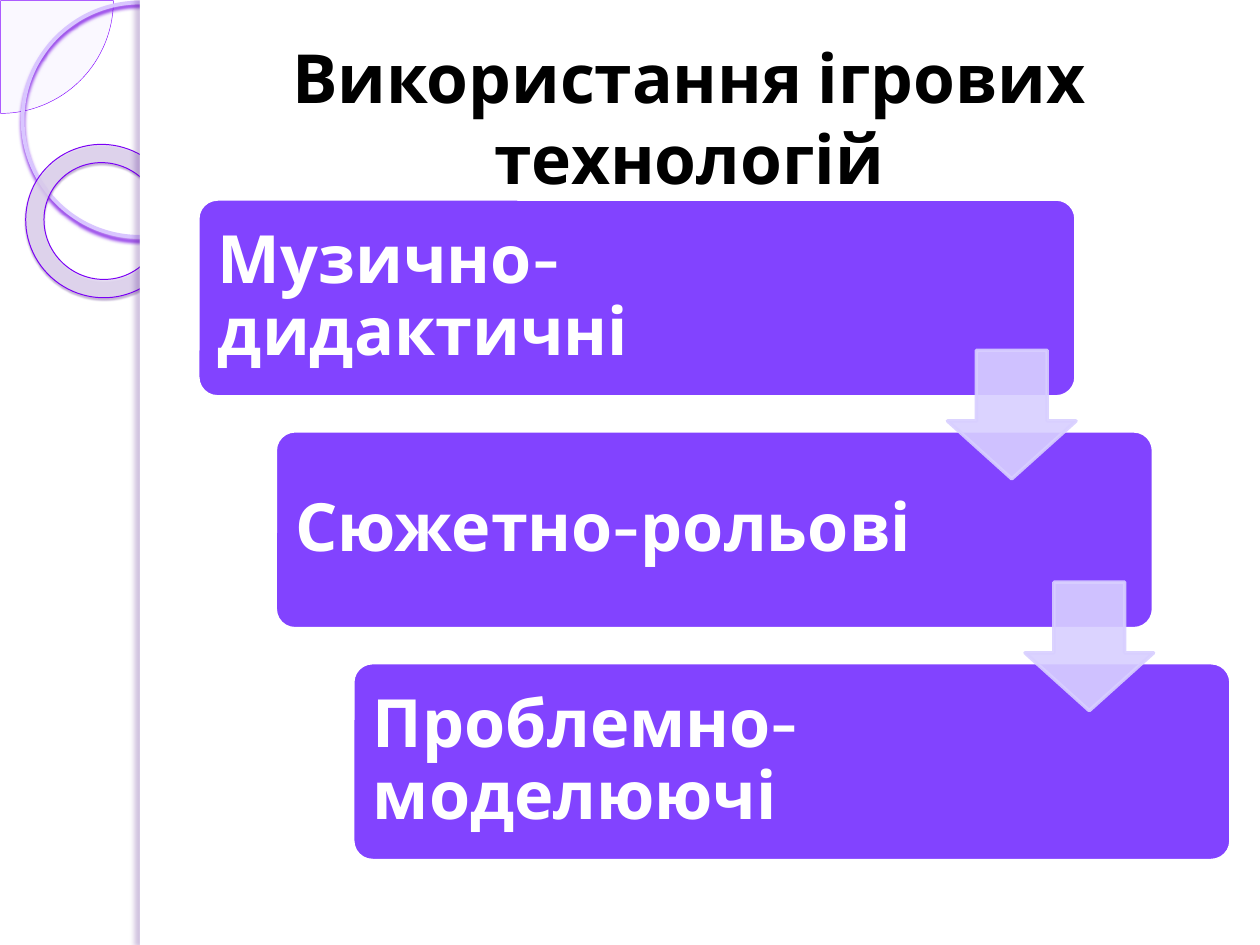
from pptx import Presentation
from pptx.dml.color import RGBColor
from pptx.enum.shapes import MSO_SHAPE
from pptx.enum.text import MSO_ANCHOR, PP_ALIGN
from pptx.oxml.ns import qn
from pptx.util import Inches, Pt
from lxml.etree import SubElement

TITLE = "Використання ігрових технологій"
STEPS = ["Музично-дидактичні", "Сюжетно-рольові", "Проблемно-моделюючі"]

THEME = {
    "font": "Cabin", "title_size": 38.7, "step_size": 38,
    "black": "000000", "white": "FFFFFF", "step": "8243FF", "arrow": "D8CFFF",
    "pie": "F1EAFF", "pie_line": "8307FF", "ring": "D9C6FF", "ring_shadow": "7100E2",
    "donut": "E3D9F1", "donut_line": "7B00F5", "donut_shadow": "380070",
    "edge_shadow": "4C1484",
}
STEP_X, STEP_Y, STEP_W, STEP_H = 1.57, 1.58, 6.97, 1.57
SHIFT_X, SHIFT_Y = 0.615, 1.84
ARROW, ARROW_DROP = 1.02, 1.2
TEXT_W = 5.35


def rgb(name):
    return RGBColor.from_string(THEME[name])


def set_alpha(fmt, alpha):
    color = next(fmt.iter(qn("a:srgbClr")))
    SubElement(color, qn("a:alpha"), val=str(alpha * 1000))


def add_shadow(sp, color, alpha, blur, dist, angle):
    effects = sp._element.spPr.find(qn("a:effectLst"))
    shadow = SubElement(effects, qn("a:outerShdw"), blurRad=str(Pt(blur)), dist=str(Pt(dist)),
                        dir=str(angle * 60000), algn="tl", rotWithShape="0")
    clr = SubElement(shadow, qn("a:srgbClr"), val=THEME[color])
    SubElement(clr, qn("a:alpha"), val=str(alpha * 1000))


def add_shape(s, kind, box, fill=None, line=None, width=1, adj=(), alpha=None,
              line_alpha=None, rotation=0, shadow=None):
    sp = s.shapes.add_shape(kind, *map(Inches, box))
    sp.rotation = rotation
    sp.shadow.inherit = False
    for i, value in enumerate(adj):
        sp.adjustments[i] = value
    if fill:
        sp.fill.solid()
        sp.fill.fore_color.rgb = rgb(fill)
        if alpha:
            set_alpha(sp._element.spPr.find(qn("a:solidFill")), alpha)
    else:
        sp.fill.background()
    if line:
        sp.line.color.rgb = rgb(line)
        sp.line.width = Pt(width)
        if line_alpha:
            set_alpha(sp._element.spPr.find(qn("a:ln")), line_alpha)
    else:
        sp.line.fill.background()
    if shadow:
        add_shadow(sp, *shadow)
    return sp


def add_text(s, text, box, size, color, align=PP_ALIGN.LEFT, inset=(0.1, 0.05), spacing=1.0):
    tf = s.shapes.add_textbox(*map(Inches, box)).text_frame
    tf.word_wrap = True
    tf.vertical_anchor = MSO_ANCHOR.MIDDLE
    tf.margin_left = tf.margin_right = Inches(inset[0])
    tf.margin_top = tf.margin_bottom = Inches(inset[1])
    p = tf.paragraphs[0]
    p.alignment = align
    p.line_spacing = spacing
    r = p.add_run()
    r.text = text
    r.font.name = THEME["font"]
    r.font.size = Pt(THEME[size])
    r.font.bold = True
    r.font.color.rgb = rgb(color)


def add_decor(s):
    add_shape(s, MSO_SHAPE.PIE, (-0.89, -0.89, 1.79, 1.79), "pie", "pie_line", 0.25,
              adj=(0, 54), alpha=33)
    add_shape(s, MSO_SHAPE.OVAL, (0.18, 0.02, 1.86, 1.86), line="ring", width=2.15,
              shadow=("ring_shadow", 85, 2, 2, 90))
    add_shape(s, MSO_SHAPE.DONUT, (0.2, 1.15, 1.23, 1.21), "donut", "donut_line", 0.58,
              adj=(0.12,), alpha=80, rotation=38.6, shadow=("donut_shadow", 35, 1, 1.2, 75))
    add_shape(s, MSO_SHAPE.RECTANGLE, (1.11, 0, 8.89, 7.5), "white")
    add_shape(s, MSO_SHAPE.RECTANGLE, (1.11, 0, 0.08, 7.5), "white",
              shadow=("edge_shadow", 25, 3, 3, 180))


def add_steps(s):
    spots = [(STEP_X + i * SHIFT_X, STEP_Y + i * SHIFT_Y) for i in range(len(STEPS))]
    for text, (x, y) in zip(STEPS, spots):
        add_shape(s, MSO_SHAPE.ROUNDED_RECTANGLE, (x, y, STEP_W, STEP_H), "step", "white", 2,
                  adj=(0.1,))
        add_text(s, text, (x, y, TEXT_W, STEP_H), "step_size", "white",
                 inset=(0.16, 0.16), spacing=0.9)
    for x, y in spots[:-1]:
        add_shape(s, MSO_SHAPE.DOWN_ARROW, (x + STEP_W - ARROW, y + ARROW_DROP, ARROW, ARROW),
                  "arrow", "arrow", 2, adj=(0.55, 0.45), alpha=90, line_alpha=90)


def main():
    prs = Presentation()
    prs.slide_width, prs.slide_height = Inches(10), Inches(7.5)
    s = prs.slides.add_slide(prs.slide_layouts[6])
    add_decor(s)
    add_text(s, TITLE, (1.17, 0.3, 8.6, 1.25), "title_size", "black", align=PP_ALIGN.CENTER)
    add_steps(s)
    prs.save("out.pptx")


if __name__ == "__main__":
    main()
